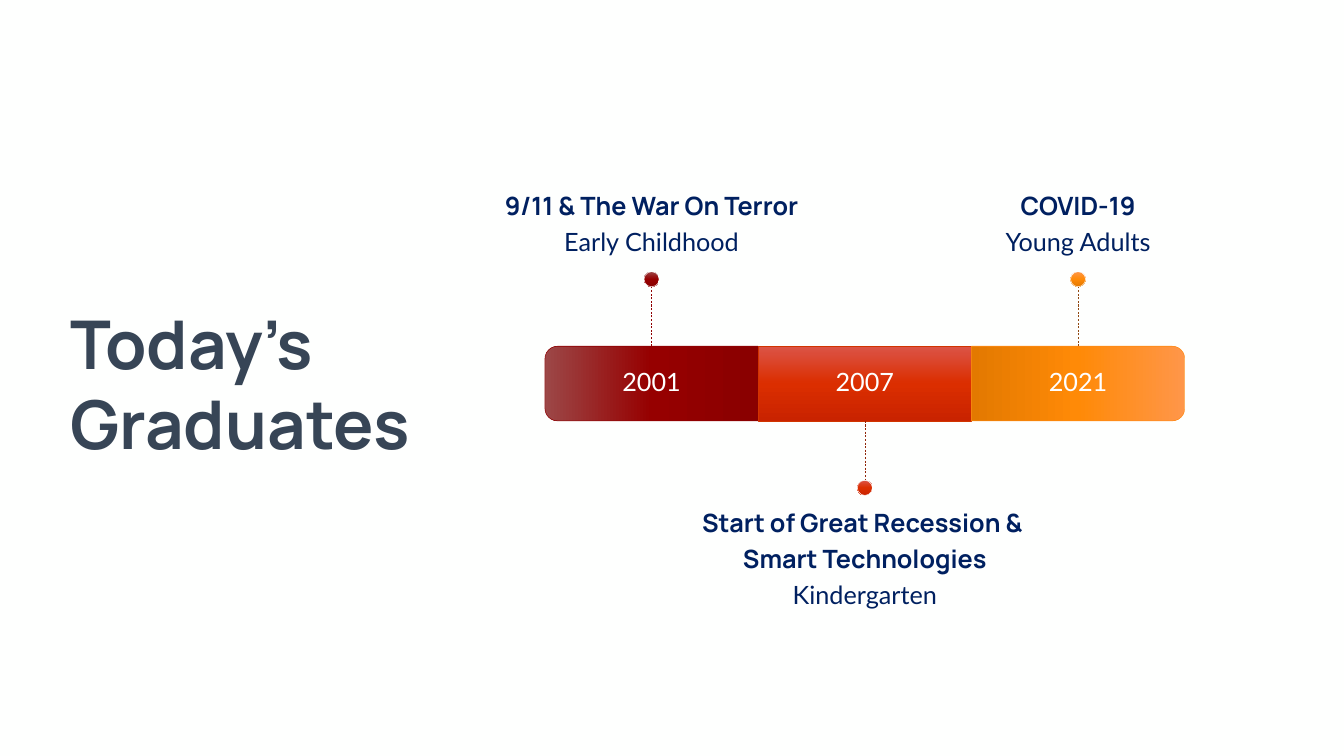
from copy import deepcopy
from dataclasses import dataclass

from pptx import Presentation
from pptx.dml.color import RGBColor
from pptx.enum.dml import MSO_LINE
from pptx.enum.shapes import MSO_CONNECTOR, MSO_SHAPE
from pptx.enum.text import MSO_ANCHOR, MSO_AUTO_SIZE, PP_ALIGN
from pptx.oxml.ns import qn
from pptx.util import Inches, Pt
from lxml import etree

RECT = MSO_SHAPE.RECTANGLE
ROUND_TOP = MSO_SHAPE.ROUND_2_SAME_RECTANGLE
OVAL = MSO_SHAPE.OVAL
STRAIGHT = MSO_CONNECTOR.STRAIGHT
DASH = MSO_LINE.DASH
TOP, MIDDLE, BOTTOM = MSO_ANCHOR.TOP, MSO_ANCHOR.MIDDLE, MSO_ANCHOR.BOTTOM
LEFT, CENTER = PP_ALIGN.LEFT, PP_ALIGN.CENTER
FIT_SHAPE = MSO_AUTO_SIZE.SHAPE_TO_FIT_TEXT


@dataclass(frozen=True)
class Theme:
    background: str = "FEFFFE"
    title: str = "374556"
    navy: str = "002060"
    white: str = "FFFFFF"
    heading_font: str = "Manrope"
    body_font: str = "Lato"
    title_size: int = 96
    body_size: int = 36
    line_width: float = 0.75
    line_spacing: float = 0.9
    space_before: float = 12.6


@dataclass(frozen=True)
class Period:
    year: str
    headings: tuple
    stage: str
    gradient: tuple
    outline: str
    stem: str
    rotation: int = 0
    above: bool = True


THEME = Theme()
PERIODS = (
    Period("2001", ("9/11 & The War On Terror",), "Early Childhood",
           ("9C4747", "960000", "8A0000"), "8F0002", "8F0002", rotation=270),
    Period("2007", ("Start of Great Recession & ", "Smart Technologies"), "Kindergarten",
           ("DB5447", "DB2E00", "C92300"), "D13400", "902609", above=False),
    Period("2021", ("COVID-19",), "Young Adults",
           ("FF9649", "FF8A07", "E37900"), "FF8A14", "914913", rotation=90),
)
STEM_LENGTH = 1.18
DOT_SIZE = 0.3
CALLOUT_WIDTH, CALLOUT_HEIGHT = 7.06, 5.17
CALLOUT_INSET = 0.3


def rgb(color):
    return RGBColor.from_string(color)


def add_text(s, box, lines, anchor, align, insets):
    tb = s.shapes.add_textbox(*map(Inches, box))
    tf = tb.text_frame
    tf.word_wrap = True
    tf.vertical_anchor = anchor
    tf.margin_left, tf.margin_top, tf.margin_right, tf.margin_bottom = map(Inches, insets)
    for i, (text, font, size, color, bold) in enumerate(lines):
        p = tf.add_paragraph() if i else tf.paragraphs[0]
        p.alignment = align
        r = p.add_run()
        r.text = text
        r.font.name = font
        r.font.size = Pt(size)
        r.font.bold = bold
        r.font.color.rgb = rgb(color)
    return tf


def add_gradient_shape(s, kind, box, colors, outline):
    sp = s.shapes.add_shape(kind, *map(Inches, box))
    sp.shadow.inherit = False
    sp.line.color.rgb = rgb(outline)
    sp.line.width = Pt(THEME.line_width)
    sp.fill.gradient()
    sp.fill.gradient_angle = 270
    stops = next(sp.element.iter(qn("a:gsLst")))
    stops.append(deepcopy(stops[0]))
    for stop, color, position in zip(sp.fill.gradient_stops, colors, (0, 0.5, 1)):
        stop.color.rgb = rgb(color)
        stop.position = position
    return sp


def add_title(s, box):
    lines = [(word, THEME.heading_font, THEME.title_size, THEME.title, True)
             for word in ("Today’s", "Graduates")]
    tf = add_text(s, box, lines, TOP, LEFT, (0.1, 0.05, 0.1, 0.05))
    tf.auto_size = FIT_SHAPE


def add_segment(s, box, period):
    x, y, w, h = box
    if period.rotation:
        turned = (x + (w - h) / 2, y + (h - w) / 2, h, w)
        bar = add_gradient_shape(s, ROUND_TOP, turned, period.gradient, period.outline)
        bar.rotation = period.rotation
        bar.adjustments[0] = 0.167
        bar.adjustments[1] = 0
    else:
        bar = add_gradient_shape(s, RECT, box, period.gradient, period.outline)
    year = (period.year, THEME.body_font, THEME.body_size, THEME.white, False)
    tf = add_text(s, box, [year], MIDDLE, CENTER, (0.3,) * 4)
    tf.paragraphs[0].line_spacing = THEME.line_spacing
    return bar


def add_callout(s, box, period, bar):
    x, y, w, h = box
    center = x + w / 2
    if period.above:
        start, end = y, y - STEM_LENGTH
        dot_top = end - DOT_SIZE
        text_top = dot_top - CALLOUT_HEIGHT
        anchor, insets = BOTTOM, (0, 0, 0, CALLOUT_INSET)
    else:
        start, end = y + h, y + h + STEM_LENGTH
        dot_top = end
        text_top = dot_top + DOT_SIZE
        anchor, insets = TOP, (0, CALLOUT_INSET, 0, 0)

    lines = [(text, THEME.heading_font, THEME.body_size, THEME.navy, True)
             for text in period.headings]
    lines.append((period.stage, THEME.body_font, THEME.body_size, THEME.navy, False))
    text_box = (center - CALLOUT_WIDTH / 2, text_top, CALLOUT_WIDTH, CALLOUT_HEIGHT)
    tf = add_text(s, text_box, lines, anchor, CENTER, insets)
    for i, p in enumerate(tf.paragraphs):
        p.line_spacing = THEME.line_spacing
        p.space_before = Pt(THEME.space_before if i else 0)

    stem = s.shapes.add_connector(STRAIGHT, *map(Inches, (center, start, center, end)))
    stem.line.color.rgb = rgb(period.stem)
    stem.line.width = Pt(THEME.line_width)
    stem.line.dash_style = DASH
    etree.SubElement(stem.element.spPr, qn("a:effectLst"))
    if not period.rotation:
        stem.begin_connect(bar, 0 if period.above else 2)

    dot = (center - DOT_SIZE / 2, dot_top, DOT_SIZE, DOT_SIZE)
    add_gradient_shape(s, OVAL, dot, period.gradient, THEME.white)


def add_timeline(s, box):
    x, y, w, h = box
    step = w / len(PERIODS)
    for i, period in enumerate(PERIODS):
        segment = (x + i * step, y, step, h)
        bar = add_segment(s, segment, period)
        add_callout(s, segment, period, bar)


def main():
    prs = Presentation()
    prs.slide_width, prs.slide_height = Inches(26.66), Inches(15)
    s = prs.slides.add_slide(prs.slide_layouts[6])
    s.background.fill.solid()
    s.background.fill.fore_color.rgb = rgb(THEME.background)
    add_timeline(s, (10.81, 6.87, 12.69, 1.48))
    add_title(s, (1.29, 5.94, 7.58, 3.33))
    prs.save("out.pptx")


if __name__ == "__main__":
    main()
